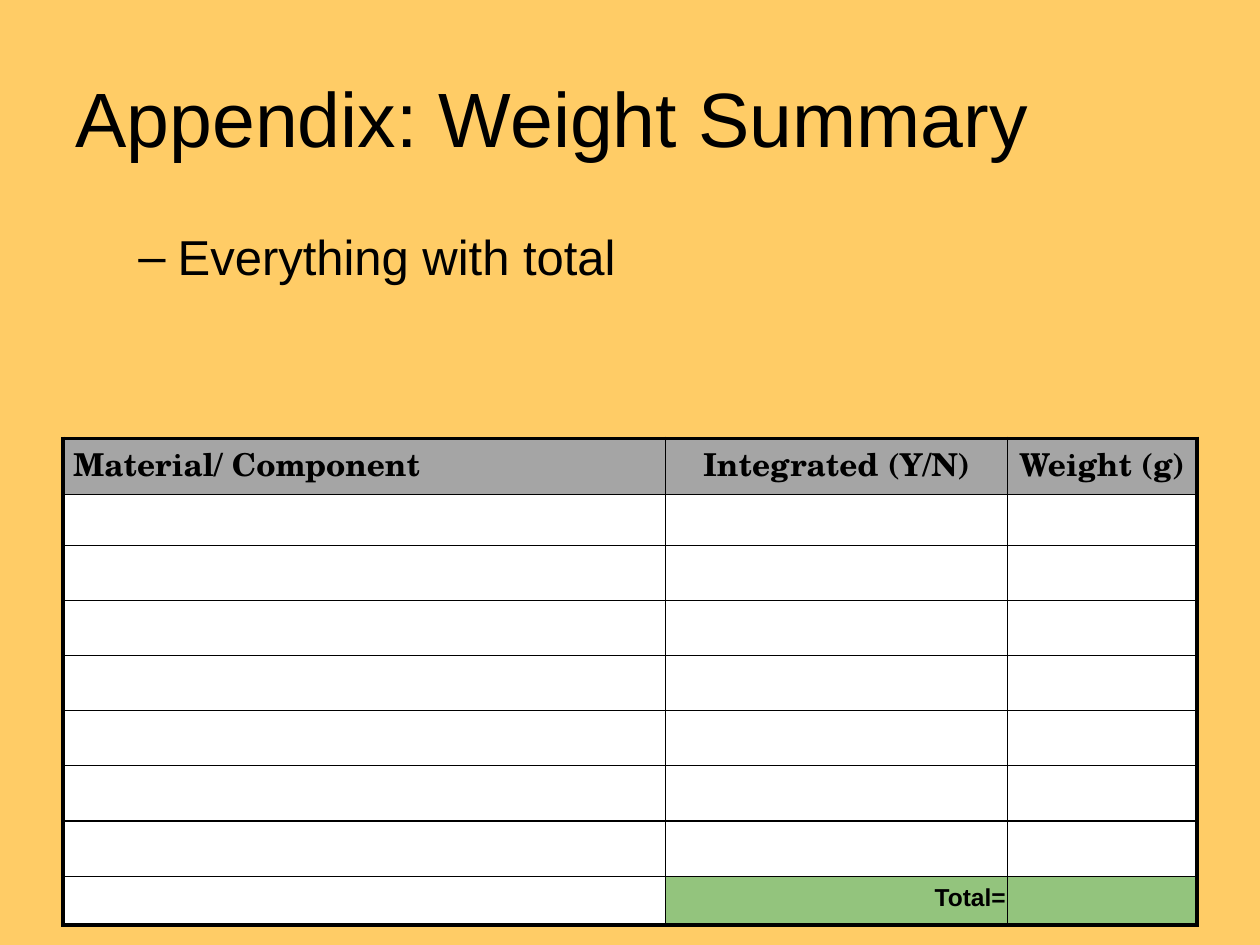
from lxml.etree import SubElement
from pptx import Presentation
from pptx.dml.color import RGBColor
from pptx.enum.text import MSO_ANCHOR, PP_ALIGN
from pptx.oxml.ns import qn
from pptx.util import Pt

COLORS = {
    "background": "FFCC66",
    "ink": "000000",
    "header": "A5A5A5",
    "body": "FFFFFF",
    "total": "93C47D",
}


def write(frame, text, size, font="Arial", bold=False, align=PP_ALIGN.LEFT):
    paragraph = frame.paragraphs[0]
    paragraph.alignment = align
    run = paragraph.add_run()
    run.text = text
    run.font.name = font
    run.font.size = Pt(size)
    run.font.bold = bold
    run.font.color.rgb = RGBColor.from_string(COLORS["ink"])
    return paragraph


def set_border(cell, side, width):
    line = SubElement(cell._tc.get_or_add_tcPr(), qn(f"a:ln{side}"), w=str(Pt(width)))
    fill = SubElement(line, qn("a:solidFill"))
    SubElement(fill, qn("a:srgbClr"), val=COLORS["ink"])


prs = Presentation()
prs.slide_width, prs.slide_height = Pt(720), Pt(540)
slide = prs.slides.add_slide(prs.slide_layouts[6])
slide.background.fill.solid()
slide.background.fill.fore_color.rgb = RGBColor.from_string(COLORS["background"])

# Title
title = slide.shapes.add_textbox(Pt(36), Pt(21.6), Pt(648), Pt(90)).text_frame
title.word_wrap = True
title.vertical_anchor = MSO_ANCHOR.MIDDLE
write(title, "Appendix: Weight Summary", 44)

# Dash bullet
summary = slide.shapes.add_textbox(Pt(36), Pt(126), Pt(648), Pt(356.4)).text_frame
summary.word_wrap = True
bullet = write(summary, "Everything with total", 28)
bullet.space_before = Pt(5.6)
bullet_format = bullet._p.get_or_add_pPr()
bullet_format.set("marL", str(Pt(58.5)))
bullet_format.set("indent", str(Pt(-22.5)))
SubElement(bullet_format, qn("a:buFont"), typeface="Arial")
SubElement(bullet_format, qn("a:buChar"), char="–")

# Weight table
column_widths = [344.5, 195, 108.5]
row_heights = [32, 29.2] + [31.5] * 6 + [28]
last_row, last_column = len(row_heights) - 1, len(column_widths) - 1
weights = slide.shapes.add_table(
    len(row_heights), len(column_widths),
    Pt(36), Pt(250.5), Pt(sum(column_widths)), Pt(sum(row_heights)),
).table
for column, width in zip(weights.columns, column_widths):
    column.width = Pt(width)

for r, height in enumerate(row_heights):
    weights.rows[r].height = Pt(height)
    for c in range(len(column_widths)):
        cell = weights.cell(r, c)
        cell.margin_left = cell.margin_top = cell.margin_right = Pt(0.75)
        cell.margin_bottom = Pt(3.6)
        outer_edges = {"L": c == 0, "R": c == last_column, "T": r == 0, "B": r == last_row}
        for side, is_outer in outer_edges.items():
            set_border(cell, side, 2.25 if is_outer else 0.75)
        if r == 0:
            color = "header"
        elif r == last_row and c > 0:
            color = "total"
        else:
            color = "body"
        cell.fill.solid()
        cell.fill.fore_color.rgb = RGBColor.from_string(COLORS[color])

for c, heading in enumerate(["Material/ Component", "Integrated (Y/N)", "Weight (g)"]):
    cell = weights.cell(0, c)
    cell.vertical_anchor = MSO_ANCHOR.BOTTOM
    write(cell.text_frame, heading, 18, font="TeX Gyre Schola", bold=True,
          align=PP_ALIGN.CENTER if c else PP_ALIGN.LEFT)
weights.cell(0, 0).margin_left = Pt(6)

total = weights.cell(last_row, 1)
total.vertical_anchor = MSO_ANCHOR.MIDDLE
write(total.text_frame, "Total=", 14, bold=True, align=PP_ALIGN.RIGHT)

prs.save("out.pptx")
